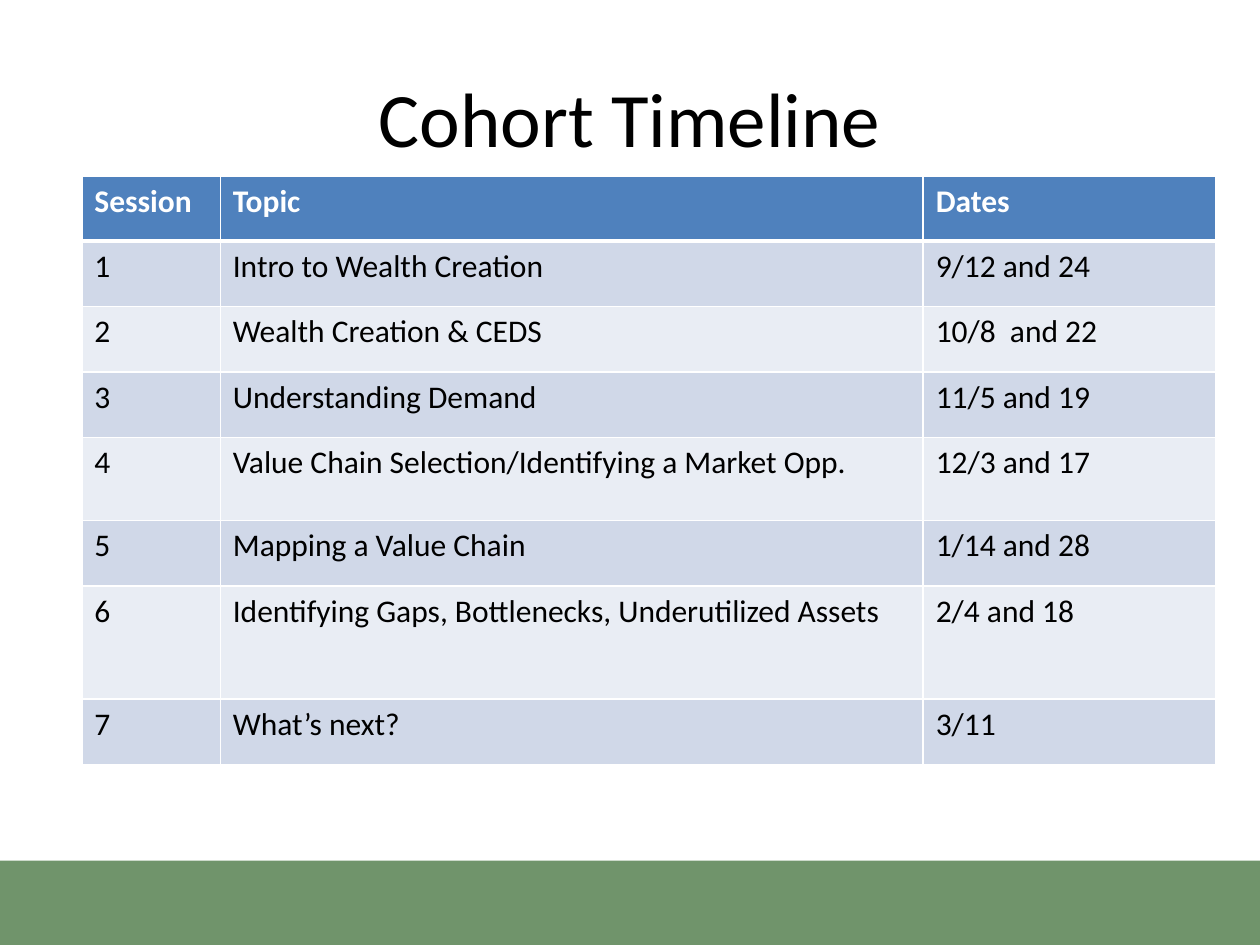
from lxml.etree import SubElement
from pptx import Presentation
from pptx.dml.color import RGBColor
from pptx.enum.shapes import MSO_SHAPE
from pptx.enum.text import MSO_ANCHOR, PP_ALIGN
from pptx.oxml.ns import qn
from pptx.util import Cm, Pt

WHITE = RGBColor(0xFF, 0xFF, 0xFF)
BLACK = RGBColor(0, 0, 0)
GREEN = RGBColor(0x70, 0x94, 0x6B)
HEADER_BLUE = RGBColor(0x4F, 0x81, 0xBD)
BAND_DARK = RGBColor(0xD0, 0xD8, 0xE8)
BAND_LIGHT = RGBColor(0xE9, 0xED, 0xF4)

TITLE_FONT = {"name": "Calibri", "size": Pt(44), "bold": False}
HEADER_FONT = {"name": "Calibri", "size": Pt(18), "bold": True}
BODY_FONT = {**HEADER_FONT, "bold": False}

COLUMN_WIDTHS = [2.79, 14.17, 5.9]
ROW_HEIGHTS = [1.3, 1.32, 1.32, 1.32, 1.67, 1.32, 2.28, 1.32]
HEADINGS = ("Session", "Topic", "Dates")
SESSIONS = [
    ("Intro to Wealth Creation", "9/12 and 24"),
    ("Wealth Creation & CEDS", "10/8  and 22"),
    ("Understanding Demand", "11/5 and 19"),
    ("Value Chain Selection/Identifying a Market Opp.", "12/3 and 17"),
    ("Mapping a Value Chain", "1/14 and 28"),
    ("Identifying Gaps, Bottlenecks, Underutilized Assets", "2/4 and 18"),
    ("What’s next?", "3/11"),
]


def write_text(para, text, font_values, color):
    span = para.add_run()
    span.text = text
    for name, value in font_values.items():
        setattr(span.font, name, value)
    span.font.color.rgb = color


def add_footer_band(page):
    band = page.shapes.add_shape(
        MSO_SHAPE.RECTANGLE, Cm(0), Cm(17.35), Cm(25.4), Cm(1.7))
    band.shadow.inherit = False
    band.fill.solid()
    band.fill.fore_color.rgb = GREEN
    band.line.fill.background()


def add_title(page, text):
    box = page.shapes.add_textbox(Cm(1.27), Cm(0.76), Cm(22.86), Cm(3.18))
    frame = box.text_frame
    for name, value in {"word_wrap": True,
                        "vertical_anchor": MSO_ANCHOR.MIDDLE}.items():
        setattr(frame, name, value)
    para = frame.paragraphs[0]
    para.alignment = PP_ALIGN.CENTER
    write_text(para, text, TITLE_FONT, BLACK)


def set_borders(cell, widths):
    properties = cell._tc.get_or_add_tcPr()
    for side, width in widths.items():
        line = SubElement(properties, qn(f"a:ln{side}"), w=str(Pt(width)))
        fill = SubElement(line, qn("a:solidFill"))
        SubElement(fill, qn("a:srgbClr"), val=str(WHITE))


def format_cell(cell, text, row):
    # A heavier rule separates the header from the sessions
    set_borders(cell, {"L": 1, "R": 1,
                       "T": 3 if row == 1 else 1,
                       "B": 3 if row == 0 else 1})
    cell.fill.solid()
    if row == 0:
        fill, font, color = HEADER_BLUE, HEADER_FONT, WHITE
    else:
        fill, font, color = (BAND_DARK if row % 2 else BAND_LIGHT), BODY_FONT, BLACK
    cell.fill.fore_color.rgb = fill
    write_text(cell.text_frame.paragraphs[0], text, font, color)


def add_timeline(page):
    rows = [HEADINGS] + [(str(number), *session)
                         for number, session in enumerate(SESSIONS, 1)]
    table = page.shapes.add_table(
        len(rows), len(HEADINGS), Cm(1.65), Cm(3.56),
        Cm(sum(COLUMN_WIDTHS)), Cm(sum(ROW_HEIGHTS))).table
    for column, width in zip(table.columns, COLUMN_WIDTHS):
        column.width = Cm(width)
    for row, (texts, height) in enumerate(zip(rows, ROW_HEIGHTS)):
        table.rows[row].height = Cm(height)
        for column, text in enumerate(texts):
            format_cell(table.cell(row, column), text, row)


def main():
    deck = Presentation()
    deck.slide_width, deck.slide_height = Cm(25.4), Cm(19.05)
    page = deck.slides.add_slide(deck.slide_layouts[6])

    # Background parts, then title and table
    add_footer_band(page)
    add_title(page, "Cohort Timeline")
    add_timeline(page)
    deck.save("out.pptx")


if __name__ == "__main__":
    main()
